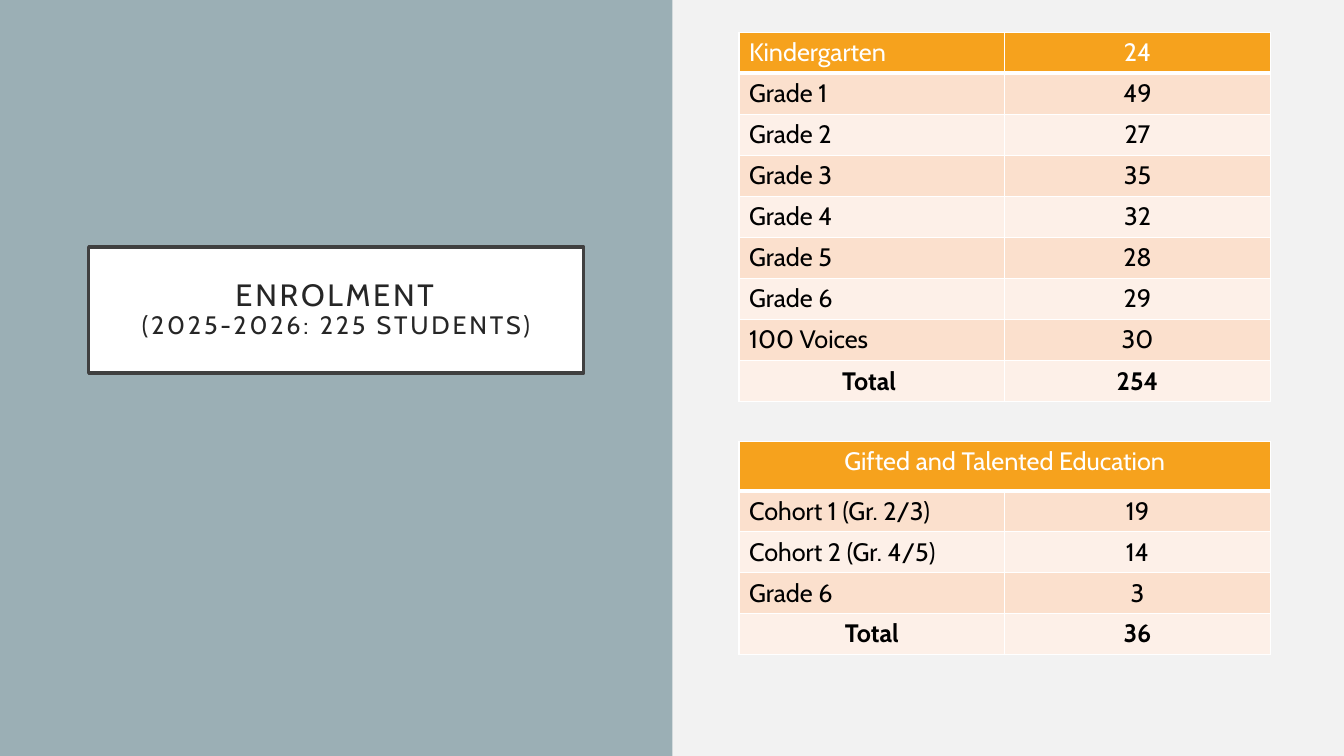
"""Build the enrolment slide."""
from dataclasses import dataclass

from lxml.etree import SubElement as Sub
from pptx import Presentation
from pptx.dml.color import RGBColor as Rgb
from pptx.enum.shapes import MSO_SHAPE as Shape
from pptx.enum.text import MSO_ANCHOR as Anchor, MSO_AUTO_SIZE as Auto, PP_ALIGN as Align
from pptx.oxml.ns import qn
from pptx.util import Inches, Pt


@dataclass(frozen=True)
class Theme:
    font: str = "Cabin"
    back: str = "F2F2F2"
    panel: str = "9BAFB5"
    frame: str = "404040"
    title: str = "262626"
    white: str = "FFFFFF"
    black: str = "000000"
    head: str = "F6A21D"
    bands: tuple = ("FDF0E8", "FBE0CD")
    big: int = 22
    base: int = 18


THEME = Theme()

GRADES = [
    ("Kindergarten", "24"),
    ("Grade 1", "49"),
    ("Grade 2", "27"),
    ("Grade 3", "35"),
    ("Grade 4", "32"),
    ("Grade 5", "28"),
    ("Grade 6", "29"),
    ("100 Voices", "30"),
    ("Total ", "254"),
]
GIFTED = [
    ("Gifted and Talented Education",),
    ("Cohort 1 (Gr. 2/3)", "19"),
    ("Cohort 2 (Gr. 4/5)", "14"),
    ("Grade 6", "3"),
    ("Total", "36"),
]


def paint(fill, color):
    fill.solid()
    fill.fore_color.rgb = Rgb.from_string(color)


def style(run, size, color, bold=False):
    font = run.font
    font.name, font.size, font.bold = THEME.font, Pt(size), bold
    font.color.rgb = Rgb.from_string(color)


def add_panel(slide):
    panel = slide.shapes.add_shape(Shape.RECTANGLE, 0, 0, Inches(6.67), Inches(7.5))
    panel.shadow.inherit = False
    paint(panel.fill, THEME.panel)
    panel.line.fill.background()
    slide.shapes.title.element.addprevious(panel.element)


def set_title(slide, *lines):
    box = slide.shapes.title
    box.left, box.top = Inches(0.88), Inches(2.45)
    box.width, box.height = Inches(4.91), Inches(1.25)
    paint(box.fill, THEME.white)
    paint(box.line.fill, THEME.frame)
    box.line.width = Pt(2.5)
    frame = box.text_frame
    frame.text = "\v".join(lines)
    frame.word_wrap, frame.auto_size = True, Auto.NONE
    frame.vertical_anchor = Anchor.MIDDLE
    frame.margin_left = frame.margin_right = Inches(0.2)
    frame.margin_top = frame.margin_bottom = Inches(0.2)
    para = frame.paragraphs[0]
    para.alignment, para.line_spacing = Align.CENTER, 0.9
    para.space_before = Pt(0)
    for run, size in zip(para.runs, (THEME.big, THEME.base)):
        style(run, size, THEME.title)
        run.font._element.set("spc", "200")


def add_edges(cell, base):
    props = cell._tc.get_or_add_tcPr()
    for side, width in zip("LRTB", (1, 1, 1, base)):
        line = Sub(props, qn(f"a:ln{side}"), w=str(Pt(width)))
        Sub(Sub(line, qn("a:solidFill")), qn("a:srgbClr"), val=THEME.white)


def add_grid(slide, data, top, height, first):
    """Add a two-column table whose first row is the header."""
    count = len(data)
    grid = slide.shapes.add_table(
        count, 2, Inches(7.33), Inches(top), Inches(5.27), Inches(height)
    ).table
    rest = (height - first) / (count - 1)
    for i, texts in enumerate(data):
        head, total = i == 0, i == count - 1
        grid.rows[i].height = Inches(first if head else rest)
        for cell in grid.rows[i].cells:
            add_edges(cell, 3 if head else 1)
            paint(cell.fill, THEME.head if head else THEME.bands[i % 2])
        if len(texts) == 1:
            grid.cell(i, 0).merge(grid.cell(i, 1))
        for j, text in enumerate(texts):
            cell = grid.cell(i, j)
            cell.text_frame.text = text
            para = cell.text_frame.paragraphs[0]
            mid = j == 1 or total or len(texts) == 1
            para.alignment = Align.CENTER if mid else Align.LEFT
            style(para.runs[0], THEME.base, THEME.white if head else THEME.black, total)


def main():
    deck = Presentation()
    deck.slide_width, deck.slide_height = Inches(13.33), Inches(7.5)
    slide = deck.slides.add_slide(deck.slide_layouts[5])
    paint(slide.background.fill, THEME.back)
    add_panel(slide)
    set_title(slide, "ENROLMENT", "(2025-2026: 225 STUDENTS)")
    add_grid(slide, GRADES, 0.32, 3.66, 0.4)
    add_grid(slide, GIFTED, 4.38, 2.11, 0.49)
    deck.save("out.pptx")


if __name__ == "__main__":
    main()
